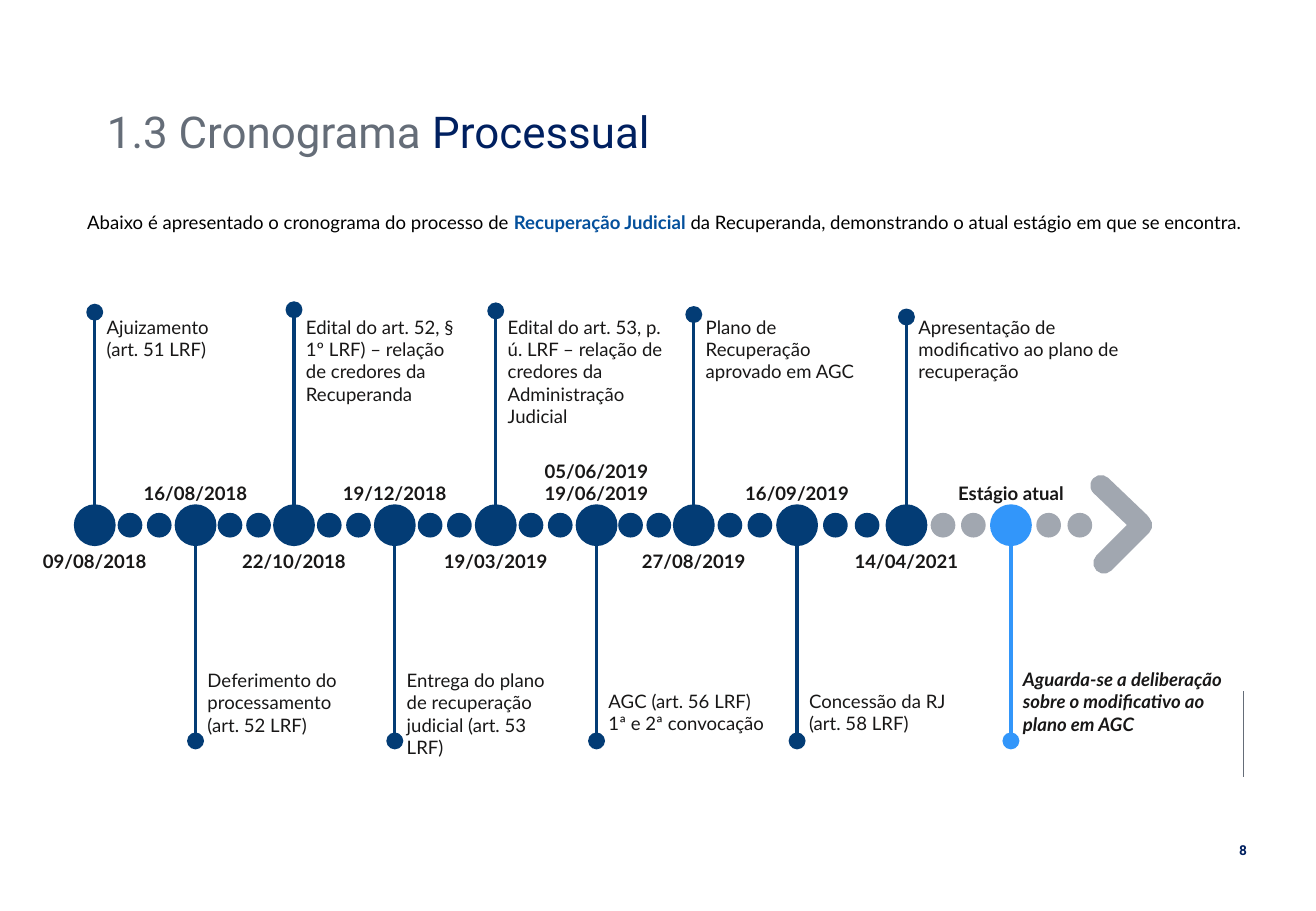
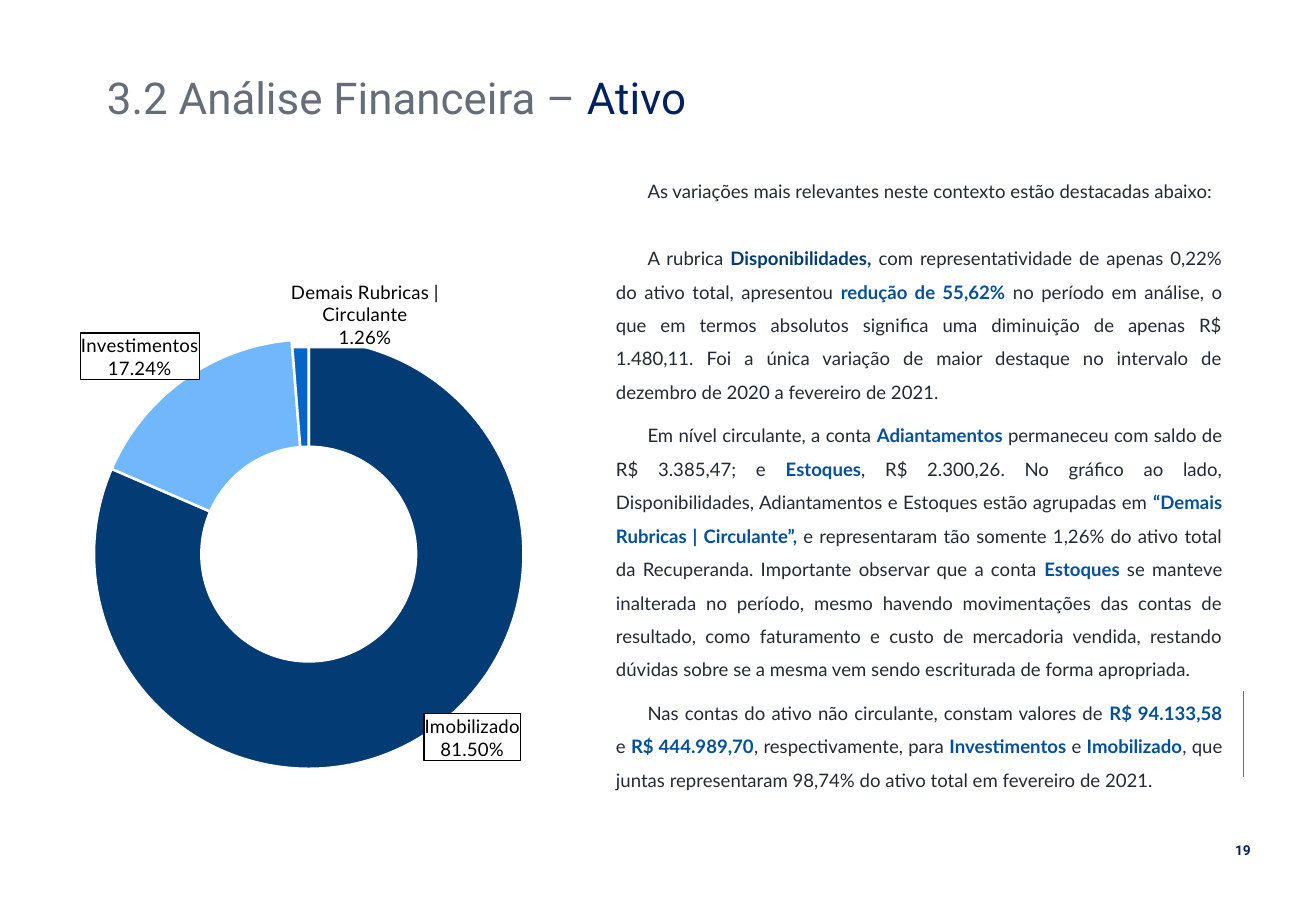
from pptx import Presentation
from pptx.chart.data import CategoryChartData as Data
from pptx.dml.color import RGBColor as Rgb
from pptx.enum.chart import XL_CHART_TYPE as Kind
from pptx.enum.shapes import MSO_CONNECTOR as Link, MSO_SHAPE as Form
from pptx.enum.text import MSO_ANCHOR as Anchor, MSO_AUTO_SIZE as Fit, PP_ALIGN as Align
from pptx.oxml import parse_xml as xml
from pptx.oxml.ns import nsdecls as names, qn
from pptx.util import Inches, Pt

NAVY = Rgb(0x03, 0x3C, 0x75)
DEEP = Rgb(0x00, 0x20, 0x60)
BLUE = Rgb(0x04, 0x50, 0x9C)
MID = Rgb(0x04, 0x65, 0xC6)
PALE = Rgb(0x71, 0xB7, 0xFC)
SKY = Rgb(0x32, 0x96, 0xFA)
SLATE = Rgb(0x65, 0x6D, 0x78)
GRAY = Rgb(0xA1, 0xA7, 0xB0)
INK = Rgb(0x18, 0x17, 0x17)
COAL = Rgb(0x22, 0x2A, 0x35)
BLACK = Rgb(0, 0, 0)
WHITE = Rgb(255, 255, 255)

deck = Presentation()
deck.slide_width, deck.slide_height = Inches(10.83), Inches(7.5)
COL, ROW = deck.slide_width / 100, deck.slide_height / 100


def grid(x, y, w, h):
    return int(x * COL), int(y * ROW), int(w * COL), int(h * ROW)


def write(frame, text, ink, mark=BLUE, size=11, face="Lato", bold=False,
          heavy=True, align=Align.LEFT, lead=None, first=0):
    frame.word_wrap = True
    frame.auto_size = Fit.NONE
    frame.text = text
    for par in frame.paragraphs:
        head, *rest = par.text.split("*")
        par.text = head
        for part in rest:
            par.add_run().text = part
        par.alignment = align
        par.line_spacing = lead
        if first:
            par._p.get_or_add_pPr().set("indent", str(int(first * COL)))
        for n, run in enumerate(par.runs):
            lit = n % 2 == 1
            font = run.font
            font.name, font.size = face, Pt(size)
            font.bold = bold or (lit and heavy)
            font.color.rgb = mark if lit else ink
    return frame


lines = []
pages = []
for title, top, page in [("1.3 Cronograma *Processual", 11.47, "8"),
                         ("3.2 Análise Financeira – *Ativo", 7.73, "19")]:
    slide = deck.slides.add_slide(deck.slide_layouts[5])
    pages.append(slide)
    head = slide.shapes.title
    head.left, head.top, head.width, head.height = grid(7.2, top, 75.5, 7.07)
    write(head.text_frame, title, SLATE, DEEP, 26, "Roboto", heavy=False, lead=0.9)
    head.text_frame.vertical_anchor = Anchor.TOP
    box = slide.shapes.add_textbox(*grid(92.4, 91.73, 4.1, 3.2))
    write(box.text_frame, page, DEEP, size=8.1, face="Roboto", bold=True, align=Align.CENTER)
    box.text_frame.word_wrap = False
    lines.append((slide, 94.46, 75.87, 94.46, 85.33, SLATE, 0.5))

time, asset = pages
intro = time.shapes.add_textbox(*grid(2.86, 22.13, 93.9, 4))
write(intro.text_frame,
      "Abaixo é apresentado o cronograma do processo de *Recuperação Judicial *"
      "da Recuperanda, demonstrando o atual estágio em que se encontra.",
      BLACK, align=Align.JUSTIFY, lead=1.14, first=2.86)

AXIS, HIGH, LOW = 57.65, 34, 81.33
steps = [
    (7.2, 34.27, HIGH, 10.25, "09/08/2018", "Ajuizamento (art. 51 LRF)"),
    (14.86, LOW, 72.8, 12.65, "16/08/2018", "Deferimento do processamento (art. 52 LRF)"),
    (22.34, 34, HIGH, 14.13, "22/10/2018",
     "Edital do art. 52, § 1º LRF) – relação de credores da Recuperanda"),
    (30, LOW, 72.8, 12.93, "19/12/2018",
     "Entrega do plano de recuperação judicial (art. 53 LRF)"),
    (37.67, 34.13, HIGH, 14.4, "19/03/2019",
     "Edital do art. 53, p. ú. LRF – relação de credores da Administração Judicial"),
    (45.33, LOW, 75.07, 14.4, "05/06/2019\n19/06/2019",
     "AGC (art. 56 LRF)\n1ª e 2ª convocação"),
    (52.72, 34.53, HIGH, 13.2, "27/08/2019", "Plano de Recuperação aprovado em AGC"),
    (60.57, LOW, 75.07, 14.13, "16/09/2019", "Concessão da RJ\n(art. 58 LRF)"),
    (68.88, 34.8, HIGH, 18.65, "14/04/2021",
     "Apresentação de modificativo ao plano de recuperação"),
    (76.82, LOW, 72.67, 18.65, "Estágio atual",
     "Aguarda-se a deliberação sobre o modificativo ao plano em AGC"),
]
ends = [step[0] for step in steps[1:]] + [85]
marks = []
for (x, tip, top, wide, date, note), end in zip(steps, ends):
    up = tip < AXIS
    now = x == steps[-1][0]
    tint = SKY if now else NAVY
    lines.append((time, x, AXIS, x, tip, tint, 2))
    marks.append((Form.OVAL, x, AXIS, 3.05, 3.05, 0, tint))
    for part in (0.35, 0.64):
        marks.append((Form.OVAL, x + part * (end - x), AXIS, 1.75, 1.75, 0,
                      GRAY if x >= steps[-2][0] else NAVY))
    box = time.shapes.add_textbox(*grid(x, top, wide, 8.8))
    write(box.text_frame, note, INK, bold=now)
    if now:
        box.text_frame.paragraphs[0].runs[0].font.italic = True
    box = time.shapes.add_textbox(*grid(x - 6, 59.73 if up else 49.73, 12, 6.27))
    write(box.text_frame, date, INK, bold=True, align=Align.CENTER)
    box.text_frame.vertical_anchor = Anchor.TOP if up else Anchor.BOTTOM
for x, y, turn in [(85.13, 55.33, 43.7), (85.32, 59.73, 315)]:
    marks.append((Form.ROUNDED_RECTANGLE, x, y, 5.54, 1.48, turn, GRAY))

for slide, x, y, right, low, tint, thick in lines:
    start, stop = grid(x, y, 0, 0), grid(right, low, 0, 0)
    line = slide.shapes.add_connector(Link.STRAIGHT, *start[:2], *stop[:2])
    line.line.color.rgb = tint
    line.line.width = Pt(thick)
    if thick > 1:
        line.line._get_or_add_ln().append(
            xml(f'<a:tailEnd {names("a")} type="oval" w="lg" len="lg"/>'))
    line._element.spPr.append(xml(f'<a:effectLst {names("a")}/>'))

for form, x, y, wide, tall, turn, tint in marks:
    tall = tall * COL / ROW
    mark = time.shapes.add_shape(form, *grid(x - wide / 2, y - tall / 2, wide, tall))
    mark.shadow.inherit = False
    mark.rotation = turn
    mark.fill.solid()
    mark.fill.fore_color.rgb = mark.line.color.rgb = tint
    mark.line.width = Pt(1)
    if form == Form.ROUNDED_RECTANGLE:
        mark.adjustments[0] = 0.5

body = asset.shapes.add_textbox(*grid(45.9, 17.87, 47.9, 69.87)).text_frame
write(body, "\n".join([
    "As variações mais relevantes neste contexto estão destacadas abaixo:",
    "A rubrica *Disponibilidades,* com representatividade de apenas 0,22% do ativo total, "
    "apresentou *redução de 55,62%* no período em análise, o que em termos absolutos significa "
    "uma diminuição de apenas R$ 1.480,11. Foi a única variação de maior destaque no intervalo "
    "de dezembro de 2020 a fevereiro de 2021.",
    "Em nível circulante, a conta *Adiantamentos *permaneceu com saldo de R$ 3.385,47; e "
    "*Estoques*, R$ 2.300,26. No gráfico ao lado, Disponibilidades, Adiantamentos e Estoques "
    "estão agrupadas em *“Demais Rubricas | Circulante”, *e representaram tão somente 1,26% do "
    "ativo total da Recuperanda. Importante observar que a conta *Estoques* se manteve "
    "inalterada no período, mesmo havendo movimentações das contas de resultado, como "
    "faturamento e custo de mercadoria vendida, restando dúvidas sobre se a mesma vem sendo "
    "escriturada de forma apropriada.",
    "Nas contas do ativo não circulante, constam valores de *R$ 94.133,58 *e *R$ 444.989,70*, "
    "respectivamente, para *Investimentos* e *Imobilizado*, que juntas representaram 98,74% do "
    "ativo total em fevereiro de 2021."]),
    COAL, align=Align.JUSTIFY, lead=1.5, first=2.4)
for par, gap in zip(body.paragraphs, (20, 6, 6, 6)):
    par.space_after = Pt(gap)
body.paragraphs[1].runs[1].font.color.rgb = NAVY

data = Data(number_format="0.00")
data.categories = ["Imobilizado", "Investimentos", "Demais Rubricas | Circulante"]
data.add_series("Series 1", (81.5, 17.24, 1.26))
chart = asset.shapes.add_chart(Kind.DOUGHNUT, *grid(0, 25.6, 47.65, 66.67), data).chart
chart.has_legend = chart.has_title = False
chart.font.name, chart.font.size, chart.font.color.rgb = "Lato", Pt(11), BLACK
plot = chart.plots[0]
plot.vary_by_categories = True
plot._element.find(qn("c:holeSize")).set("val", "75")
area = chart._chartSpace.chart.plotArea
for old in area.findall(qn("c:layout")):
    area.remove(old)
area.insert(0, xml(
    f'<c:layout {names("c")}><c:manualLayout><c:layoutTarget val="inner"/>'
    '<c:xMode val="edge"/><c:yMode val="edge"/><c:x val="0.15"/><c:y val="0.175"/>'
    '<c:w val="0.685"/><c:h val="0.707"/></c:manualLayout></c:layout>'))

ring = plot.series[0]
tags = ring.data_labels
tags.number_format, tags.number_format_is_linked = "0.00%", False
tags.show_value = False
tags.show_percentage = tags.show_category_name = True
tags.font.name, tags.font.size, tags.font.color.rgb = "Lato", Pt(11), BLACK
for n, (tint, x, y, edge) in enumerate([
        (NAVY, 0.12, 0.08, '<a:solidFill><a:srgbClr val="000000"/></a:solidFill>'),
        (PALE, -0.12, -0.11, '<a:solidFill><a:srgbClr val="000000"/></a:solidFill>'),
        (MID, 0.1, -0.13, '<a:noFill/>')]):
    look = ring.points[n].format
    look.fill.solid()
    look.fill.fore_color.rgb = tint
    look.line.color.rgb = WHITE
    look.line.width = Pt(1.5)
    tags._element.insert(n, xml(
        f'<c:dLbl {names("c", "a")}><c:idx val="{n}"/><c:layout><c:manualLayout>'
        f'<c:x val="{x}"/><c:y val="{y}"/></c:manualLayout></c:layout>'
        '<c:numFmt formatCode="0.00%" sourceLinked="0"/>'
        '<c:spPr><a:solidFill><a:srgbClr val="FFFFFF"/></a:solidFill>'
        f'<a:ln w="9525">{edge}</a:ln></c:spPr>'
        '<c:showLegendKey val="0"/><c:showVal val="0"/><c:showCatName val="1"/>'
        '<c:showSerName val="0"/><c:showPercent val="1"/><c:showBubbleSize val="0"/>'
        '<c:separator>\n</c:separator></c:dLbl>'))

deck.save("out.pptx")
